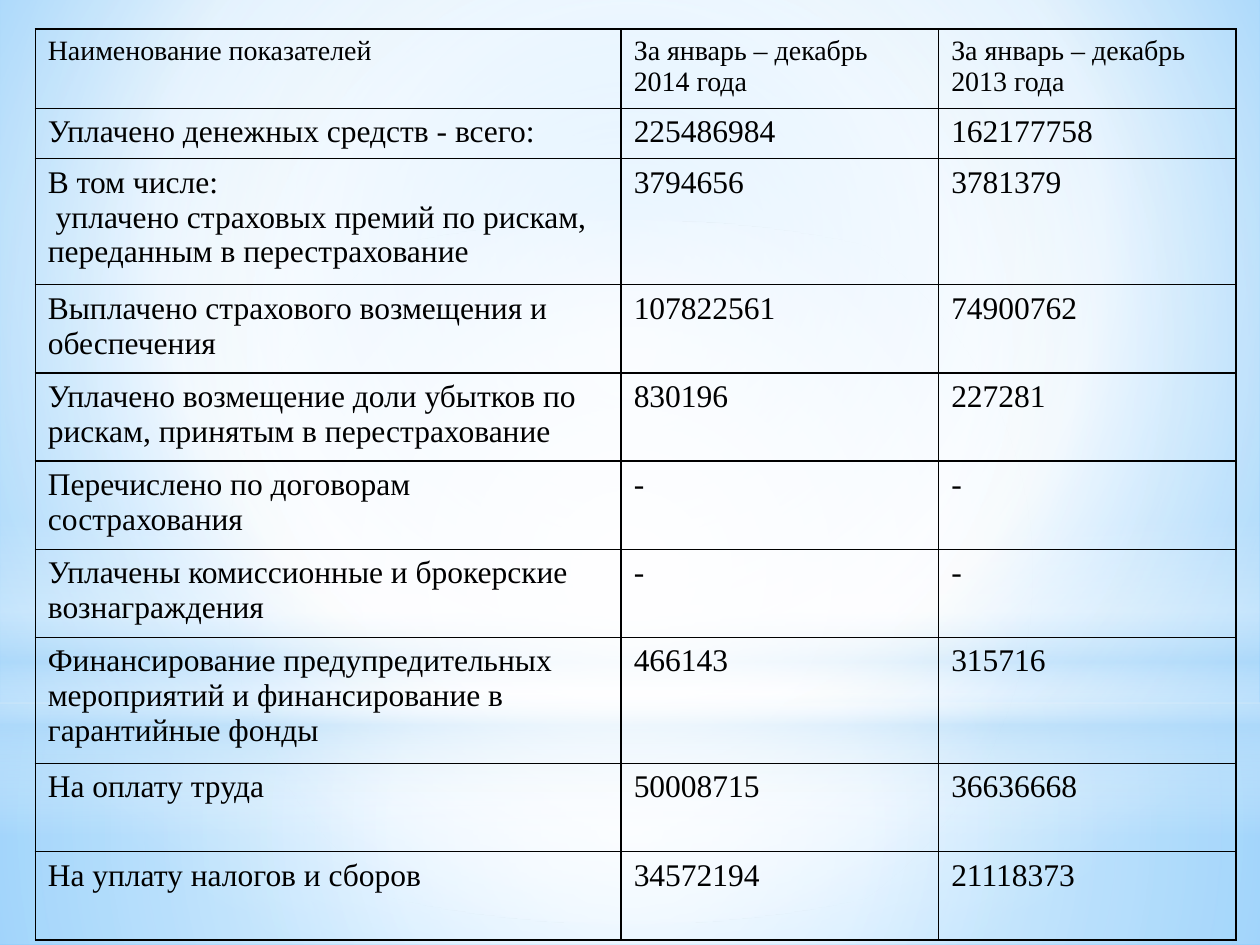
"""Builds a slide with a table of paid funds over a soft blue gradient."""
from dataclasses import dataclass
from typing import NamedTuple

from pptx import Presentation
from pptx.dml.color import RGBColor
from pptx.enum.shapes import MSO_SHAPE
from pptx.oxml import parse_xml
from pptx.oxml.ns import nsdecls, qn
from pptx.util import Inches, Pt

WIDTH, HEIGHT = Inches(10), Inches(7.5)


@dataclass(frozen=True)
class Theme:
    font: str = "Times New Roman"
    ink: str = "000000"
    white: str = "FFFFFF"
    haze: str = "B4DCFA"
    sky: str = "9ED5FF"
    edge: str = "5BB9FF"
    head_size: int = 16
    body_size: int = 18
    border: int = 1


class Stop(NamedTuple):
    place: int
    color: str
    opacity: int = 100


class Gradient(NamedTuple):
    stops: list[Stop]
    focus: tuple[int, int, int, int] | None = (50, 50, 50, 50)


class Glow(NamedTuple):
    kind: MSO_SHAPE
    top: float
    height: float
    gradient: Gradient


class Row(NamedTuple):
    height: float
    name: str
    current: str
    previous: str


THEME = Theme()
W, H = THEME.white, THEME.haze
BACKDROP = Gradient([Stop(0, THEME.sky), Stop(60, W), Stop(100, THEME.edge)], (20, 10, 20, 60))
HORIZON = 0.744
GLOWS = [
    Glow(MSO_SHAPE.RECTANGLE, HORIZON, 1 - HORIZON,
         Gradient([Stop(0, W, 91), Stop(37, W, 76), Stop(100, H, 79)])),
    Glow(MSO_SHAPE.RECTANGLE, 0, HORIZON,
         Gradient([Stop(0, W, 89), Stop(48, W, 62), Stop(100, H, 79)])),
    Glow(MSO_SHAPE.RECTANGLE, 0.55, 0.333,
         Gradient([Stop(0, W, 0), Stop(29, W, 30), Stop(45, H, 40), Stop(55, W, 26),
                   Stop(65, H, 60), Stop(100, W, 0)], None)),
    Glow(MSO_SHAPE.OVAL, 0.233, HORIZON, Gradient([Stop(0, W), Stop(56, W, 0)])),
]
COLUMNS = (4.65, 2.52, 2.36)
ONE, TWO, THREE = 0.4, 0.7, 1.0
ROWS = [
    Row(0.63, "Наименование показателей", "За январь – декабрь 2014 года",
        "За январь – декабрь 2013 года"),
    Row(ONE, "Уплачено денежных средств - всего:", "225486984", "162177758"),
    Row(THREE, "В том числе:\n уплачено страховых премий по рискам, "
        "переданным в перестрахование", "3794656", "3781379"),
    Row(TWO, "Выплачено страхового возмещения и обеспечения", "107822561", "74900762"),
    Row(TWO, "Уплачено возмещение доли убытков по рискам, принятым в перестрахование",
        "830196", "227281"),
    Row(TWO, "Перечислено по договорам сострахования", "-", "-"),
    Row(TWO, "Уплачены комиссионные и брокерские вознаграждения", "-", "-"),
    Row(THREE, "Финансирование предупредительных мероприятий и финансирование "
        "в гарантийные фонды", "466143", "315716"),
    Row(TWO, "На оплату труда", "50008715", "36636668"),
    Row(TWO, "На уплату налогов и сборов", "34572194", "21118373"),
]


def apply_gradient(fill, host, gradient: Gradient) -> None:
    stops = "".join(
        f'<a:gs pos="{stop.place * 1000}"><a:srgbClr val="{stop.color}">'
        f'<a:alpha val="{stop.opacity * 1000}"/></a:srgbClr></a:gs>'
        for stop in gradient.stops)
    shade = '<a:lin ang="5400000" scaled="0"/>'
    if gradient.focus:
        sides = " ".join(f'{side}="{share * 1000}"' for side, share in zip("ltrb", gradient.focus))
        shade = f'<a:path path="circle"><a:fillToRect {sides}/></a:path>'
    fill.gradient()
    old = next(host.iter(qn("a:gradFill")))
    old.getparent().replace(old, parse_xml(
        f'<a:gradFill {nsdecls("a")} rotWithShape="1"><a:gsLst>{stops}</a:gsLst>{shade}</a:gradFill>'))


def add_glow(s, glow: Glow) -> None:
    sp = s.shapes.add_shape(glow.kind, 0, int(HEIGHT * glow.top), WIDTH, int(HEIGHT * glow.height))
    sp.shadow.inherit = False
    sp.line.fill.background()
    apply_gradient(sp.fill, sp.element, glow.gradient)


def fill_cell(cell, text: str, size: int) -> None:
    cell.text_frame.text = text
    for p in cell.text_frame.paragraphs:
        for r in p.runs:
            r.font.name, r.font.size = THEME.font, Pt(size)
            r.font.color.rgb = RGBColor.from_string(THEME.ink)
    cell.fill.background()
    properties = cell._tc.get_or_add_tcPr()
    for index, side in enumerate("LRTB"):
        properties.insert(index, parse_xml(
            f'<a:ln{side} {nsdecls("a")} w="{Pt(THEME.border)}"><a:solidFill>'
            f'<a:srgbClr val="{THEME.ink}"/></a:solidFill></a:ln{side}>'))


def add_payments(s, rows: list[Row]) -> None:
    total = sum(row.height for row in rows)
    table = s.shapes.add_table(len(rows), len(COLUMNS), Inches(0.28), Inches(0.23),
                               Inches(sum(COLUMNS)), Inches(total)).table
    table.first_row = table.horz_banding = False
    for column, width in zip(table.columns, COLUMNS):
        column.width = Inches(width)
    for i, row in enumerate(rows):
        table.rows[i].height = Inches(row.height)
        size = THEME.body_size if i else THEME.head_size
        for j, text in enumerate((row.name, row.current, row.previous)):
            fill_cell(table.cell(i, j), text, size)


def main() -> None:
    prs = Presentation()
    prs.slide_width, prs.slide_height = WIDTH, HEIGHT
    s = prs.slides.add_slide(prs.slide_layouts[6])
    apply_gradient(s.background.fill, s.element, BACKDROP)
    for glow in GLOWS:
        add_glow(s, glow)
    add_payments(s, ROWS)
    prs.save("out.pptx")


if __name__ == "__main__":
    main()
